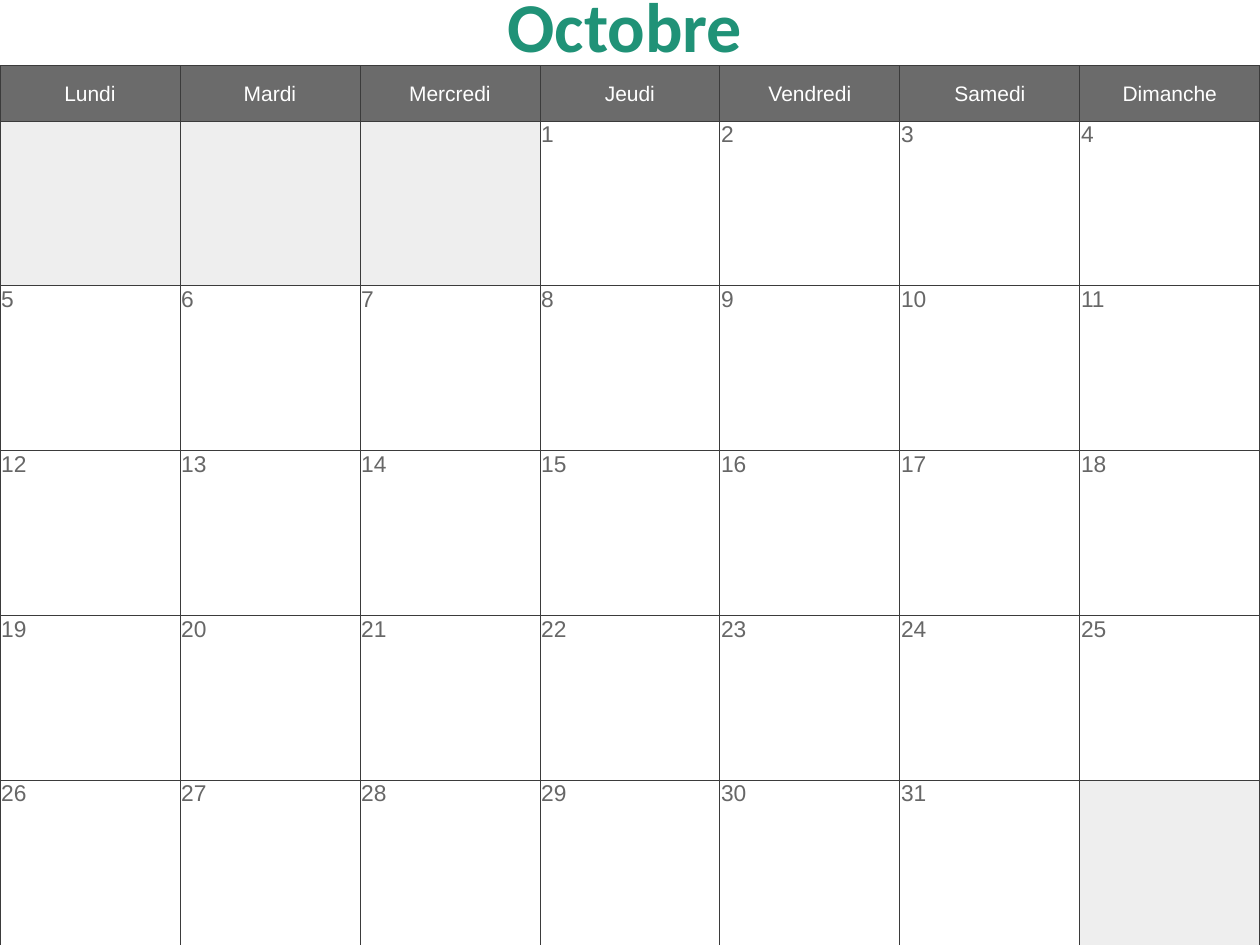
from dataclasses import dataclass

from lxml import etree
from pptx import Presentation
from pptx.dml.color import RGBColor
from pptx.enum.text import MSO_ANCHOR, MSO_AUTO_SIZE, PP_ALIGN
from pptx.oxml.ns import qn
from pptx.util import Inches, Pt

MID, TOP = MSO_ANCHOR.MIDDLE, MSO_ANCHOR.TOP
CENTER, LEFT = PP_ALIGN.CENTER, PP_ALIGN.LEFT
GROW = MSO_AUTO_SIZE.SHAPE_TO_FIT_TEXT

GREEN = RGBColor(0x20, 0x92, 0x77)
DARK = RGBColor(0x6B, 0x6B, 0x6B)
GREY = RGBColor(0x67, 0x67, 0x67)
PALE = RGBColor(0xEE, 0xEE, 0xEE)
WHITE = RGBColor(0xFF, 0xFF, 0xFF)
EDGE = RGBColor(0x3B, 0x3B, 0x3B)

WIDE, HIGH = Inches(10), Inches(7.5)
HEAD_TOP, HEAD_HIGH = Inches(0.52), Inches(0.44)
NAMES = ["Lundi", "Mardi", "Mercredi", "Jeudi", "Vendredi", "Samedi", "Dimanche"]
COLS, WEEKS = len(NAMES), 5
FIRST, LAST = 3, 31  # column of day 1, number of days
PAD = Inches(0.01)
INSET = {"margin_left": PAD, "margin_top": PAD, "margin_right": PAD, "margin_bottom": 0}


@dataclass(frozen=True)
class Style:
    fill: RGBColor
    ink: RGBColor
    size: int
    align: PP_ALIGN
    anchor: MSO_ANCHOR


HEAD = Style(DARK, WHITE, 12, CENTER, MID)
DAY = Style(WHITE, GREY, 13, LEFT, TOP)
BLANK = Style(PALE, GREY, 13, LEFT, TOP)


def put(obj, values: dict) -> None:
    for name, value in values.items():
        setattr(obj, name, value)


def frame(cell) -> None:
    """Draw a thin line on all four sides, ahead of the cell's fill."""
    props = cell._tc.get_or_add_tcPr()
    for spot, side in enumerate(("a:lnL", "a:lnR", "a:lnT", "a:lnB")):
        line = etree.Element(qn(side), w=str(Pt(0.5)))
        fill = etree.SubElement(line, qn("a:solidFill"))
        etree.SubElement(fill, qn("a:srgbClr"), val=str(EDGE))
        props.insert(spot, line)


def draw_cell(cell, text: str, style: Style) -> None:
    put(cell, {**INSET, "vertical_anchor": style.anchor})
    cell.fill.solid()
    cell.fill.fore_color.rgb = style.fill
    frame(cell)
    para = cell.text_frame.paragraphs[0]
    para.alignment = style.align
    if text:
        run = para.add_run()
        run.text = text
        put(run.font, {"name": "Arial", "size": Pt(style.size)})
        run.font.color.rgb = style.ink


def draw_title(title, text: str) -> None:
    put(title, {"left": Inches(3.92), "top": Inches(-0.19),
                "width": Inches(2.08), "height": Inches(0.77)})
    put(title.text_frame, {"text": text, "word_wrap": False, "auto_size": GROW})
    para = title.text_frame.paragraphs[0]
    para.alignment = CENTER
    font = para.runs[0].font
    put(font, {"name": "Calibri", "size": Pt(40), "bold": True})
    font.color.rgb = GREEN


def draw_month(slide) -> None:
    table = slide.shapes.add_table(
        WEEKS + 1, COLS, 0, HEAD_TOP, WIDE, HIGH - HEAD_TOP).table
    put(table, {"first_row": False, "horz_banding": False})
    for col in table.columns:
        col.width = WIDE // COLS
    for num, row in enumerate(table.rows):
        row.height = (HIGH - HEAD_TOP - HEAD_HIGH) // WEEKS if num else HEAD_HIGH

    # Weekday names
    for col, name in enumerate(NAMES):
        draw_cell(table.cell(0, col), name, HEAD)

    # Days, with shaded cells outside the month
    for spot in range(WEEKS * COLS):
        week, col = divmod(spot, COLS)
        day = spot - FIRST + 1
        live = 1 <= day <= LAST
        draw_cell(table.cell(week + 1, col), str(day) if live else "",
                  DAY if live else BLANK)


def main() -> None:
    deck = Presentation()
    put(deck, {"slide_width": WIDE, "slide_height": HIGH})
    slide = deck.slides.add_slide(deck.slide_layouts[5])
    draw_month(slide)
    draw_title(slide.shapes.title, "Octobre")
    deck.save("out.pptx")


if __name__ == "__main__":
    main()
